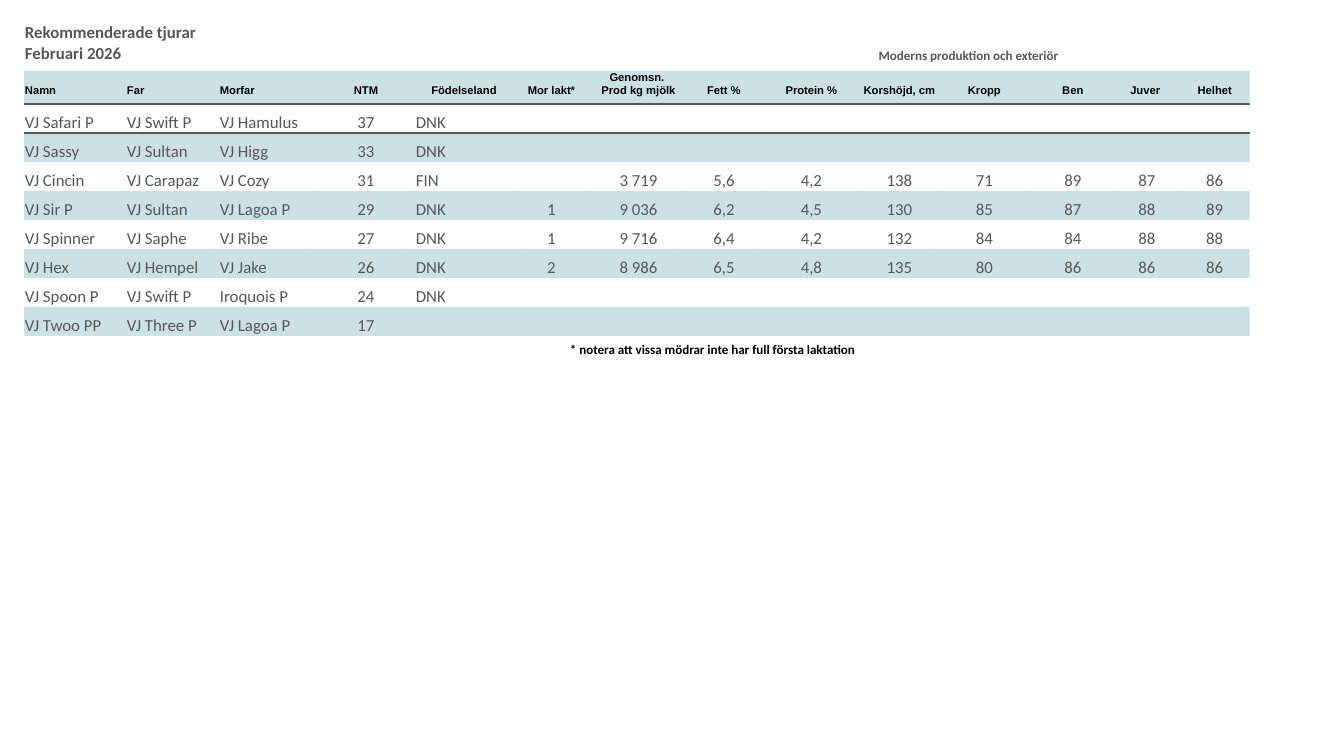
from lxml import etree
from pptx import Presentation
from pptx.dml.color import RGBColor
from pptx.enum.text import MSO_ANCHOR, PP_ALIGN
from pptx.oxml.ns import qn
from pptx.util import Emu, Pt

PX = 914400 / 134.4
LEFT, CENTER = PP_ALIGN.LEFT, PP_ALIGN.CENTER
BOTTOM = MSO_ANCHOR.BOTTOM
GREY = RGBColor(0x57, 0x57, 0x57)
BLACK = RGBColor(0, 0, 0)
TEAL = RGBColor(0x00, 0x6B, 0x85)
PLAIN = "{2D5ABB26-0587-4C30-8999-92F81FD0307C}"

TITLE = {"size": Pt(9), "name": "Calibri", "bold": True, "color": GREY}
GROUP = {**TITLE, "size": Pt(7)}
HEAD = {"size": Pt(6), "name": "Arial", "bold": True, "color": BLACK}
BODY = {**TITLE, "bold": False}
NOTE = {**GROUP, "color": BLACK}

COLS = [102, 93, 98, 98, 98, 77, 97, 74, 101, 75, 95, 82, 66, 70]
ROW = 29
HEADS = ["Namn", "Far", "Morfar", "NTM", "Födelseland", "Mor lakt*",
         "Genomsn. \vProd kg mjölk", "Fett %", "Protein %", "Korshöjd, cm",
         "Kropp", "Ben", "Juver ", "Helhet"]
BULLS = [
    ["VJ Safari P", "VJ Swift P", "VJ Hamulus", "37", "DNK"],
    ["VJ Sassy", "VJ Sultan", "VJ Higg", "33", "DNK"],
    ["VJ Cincin", "VJ Carapaz", "VJ Cozy", "31", "FIN", "", "3 719", "5,6",
     "4,2", "138", "71", "89", "87", "86"],
    ["VJ Sir P", "VJ Sultan", "VJ Lagoa P", "29", "DNK", "1", "9 036", "6,2",
     "4,5", "130", "85", "87", "88", "89"],
    ["VJ Spinner", "VJ Saphe", "VJ Ribe", "27", "DNK", "1", "9 716", "6,4",
     "4,2", "132", "84", "84", "88", "88"],
    ["VJ Hex", "VJ Hempel", "VJ Jake", "26", "DNK", "2", "8 986", "6,5",
     "4,8", "135", "80", "86", "86", "86"],
    ["VJ Spoon P", "VJ Swift P", "Iroquois P", "24", "DNK"],
    ["VJ Twoo PP", "VJ Three P", "VJ Lagoa P", "17"],
]


def px(n):
    return Emu(round(n * PX))


class Sheet:
    def __init__(self, slide):
        self.slide = slide

    def table(self, x, y, cols, rows):
        """Add a table without style, every cell empty and clear."""
        frame = self.slide.shapes.add_table(
            len(rows), len(cols), px(x), px(y), px(sum(cols)), px(sum(rows)))
        table = frame.table
        table.first_row = table.horz_banding = False
        table._tbl.tblPr.find(qn("a:tableStyleId")).text = PLAIN
        for col, wide in zip(table.columns, cols):
            col.width = px(wide)
        for row, high in zip(table.rows, rows):
            row.height = px(high)
        for cell in table.iter_cells():
            self.label(cell, "", BODY)
            cell.fill.background()
        return table

    def label(self, cell, text, style, align=LEFT, foot=0):
        room = {"margin_left": px(1), "margin_right": px(1),
                "margin_top": px(1), "margin_bottom": px(foot),
                "vertical_anchor": BOTTOM}
        for key, value in room.items():
            setattr(cell, key, value)
        cell.text = text
        para = cell.text_frame.paragraphs[0]
        para.alignment = align
        for run in para.runs:
            for key, value in style.items():
                if key == "color":
                    run.font.color.rgb = value
                else:
                    setattr(run.font, key, value)
        if not text:
            size = str(round(style["size"].pt * 100))
            for end in para._p.findall(qn("a:endParaRPr")):
                para._p.remove(end)
            etree.SubElement(para._p, qn("a:endParaRPr"), sz=size)

    def tint(self, cell):
        """Fill the cell with teal at 20 % opacity."""
        cell.fill.solid()
        cell.fill.fore_color.rgb = TEAL
        tone = cell._tc.tcPr.find(qn("a:solidFill")).find(qn("a:srgbClr"))
        etree.SubElement(tone, qn("a:alpha"), val="20000")

    def rule(self, cell, side):
        """Draw a 1 pt grey border on one side: lnT or lnB."""
        line = etree.Element(qn("a:" + side), w=str(int(Pt(1))))
        fill = etree.SubElement(line, qn("a:solidFill"))
        etree.SubElement(fill, qn("a:srgbClr"), val=str(GREY))
        cell._tc.tcPr.insert(0, line)


def main():
    deck = Presentation()
    deck.slide_width, deck.slide_height = px(1344), px(756)
    sheet = Sheet(deck.slides.add_slide(deck.slide_layouts[6]))

    table = sheet.table(24, 22, COLS, [34] + [ROW] * (len(BULLS) + 2))
    for start, end in [(0, 1), (5, 6), (7, 13)]:
        table.cell(0, start).merge(table.cell(0, end))
    sheet.label(table.cell(0, 0), "Rekommenderade tjurar Februari 2026",
                TITLE, foot=7)
    sheet.label(table.cell(0, 7), "Moderns produktion och exteriör",
                GROUP, CENTER, 7)

    for c, head in enumerate(HEADS):
        cell = table.cell(1, c)
        sheet.label(cell, head, HEAD, LEFT if c < 3 else CENTER, 7)
        sheet.tint(cell)
        sheet.rule(cell, "lnB")
        sheet.rule(table.cell(2, c), "lnT")

    for r, bull in enumerate(BULLS, 2):
        for c, text in enumerate(bull):
            align = LEFT if c in (0, 1, 2, 4) else CENTER
            sheet.label(table.cell(r, c), text, BODY, align)
        if r % 2:
            for c in range(len(COLS)):
                sheet.tint(table.cell(r, c))

    note = sheet.table(569, 336, [481], [ROW])
    sheet.label(note.cell(0, 0),
                "* notera att vissa mödrar inte har full första laktation",
                NOTE, foot=7)
    deck.save("out.pptx")


if __name__ == "__main__":
    main()
